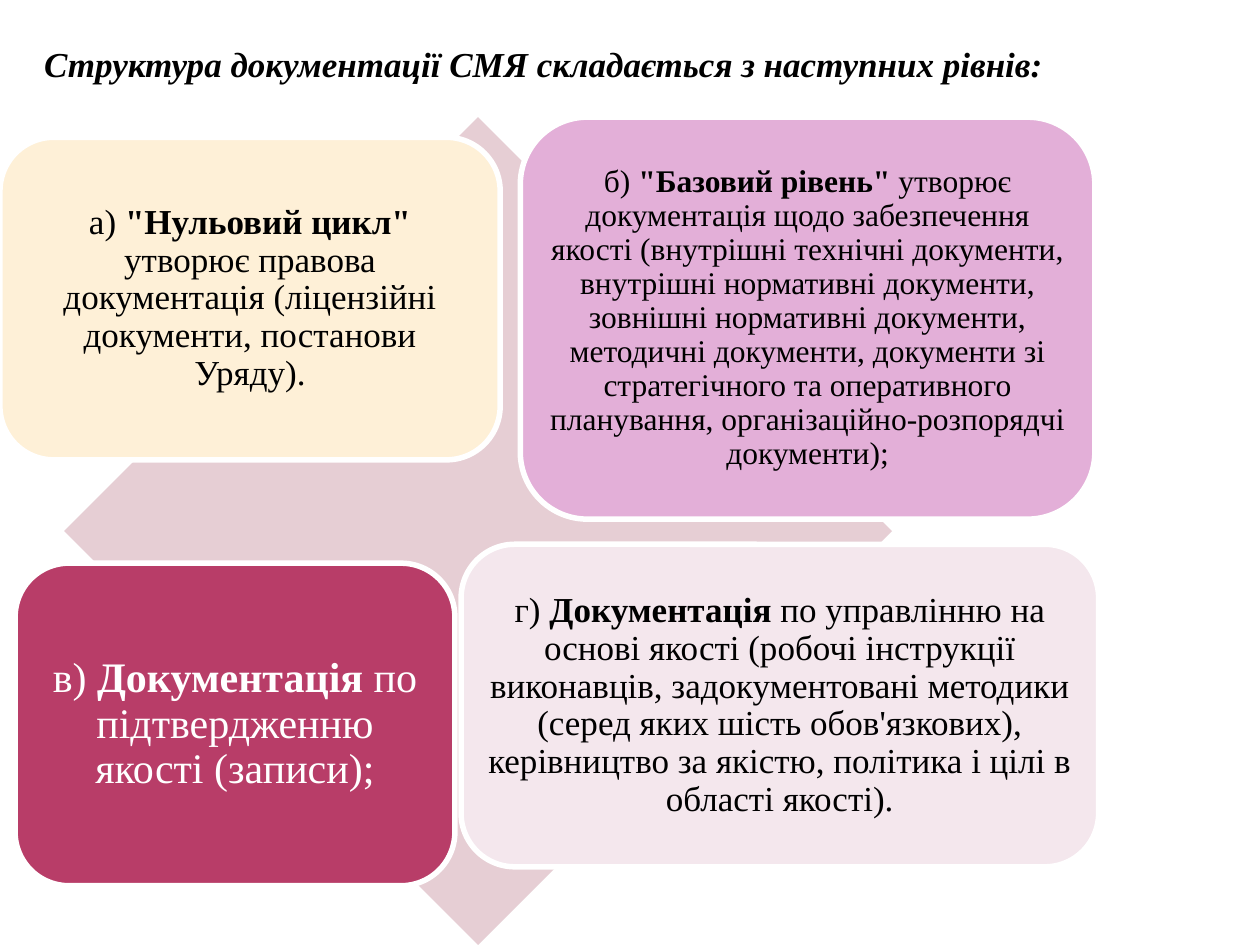
import pptx
import pptx.util
import pptx.dml.color
import pptx.enum.shapes
import pptx.enum.text
from lxml import etree

Inches, Pt = pptx.util.Inches, pptx.util.Pt
RGBColor = pptx.dml.color.RGBColor
SHAPES = pptx.enum.shapes.MSO_SHAPE
ALIGN = pptx.enum.text.PP_ALIGN
ANCHOR = pptx.enum.text.MSO_ANCHOR

FONT = "Times New Roman"
BLACK = RGBColor(0x00, 0x00, 0x00)
WHITE = RGBColor(0xFF, 0xFF, 0xFF)
ROSE = RGBColor(0xE6, 0xCE, 0xD4)
CREAM = RGBColor(0xFE, 0xF0, 0xD7)
ORCHID = RGBColor(0xE3, 0xAF, 0xD8)
CRIMSON = RGBColor(0xB8, 0x3D, 0x68)
BLUSH = RGBColor(0xF4, 0xE7, 0xED)

# Offset and size within the diagram, fill, text colour, text size, inset,
# then the letter, bold term and description of each level
LEVELS = [
    ((0, 0.16, 3.97, 2.56), CREAM, BLACK, 20, 0.08,
     "а) ", "\"Нульовий цикл\" ",
     "утворює правова документація (ліцензійні документи, постанови Уряду)."),
    ((4.13, 0, 4.56, 3.19), ORCHID, BLACK, 18, 0.07,
     "б) ", "\"Базовий рівень\" ",
     "утворює документація щодо забезпечення якості (внутрішні технічні "
     "документи, внутрішні нормативні документи, зовнішні нормативні "
     "документи, методичні документи, документи зі стратегічного та "
     "оперативного планування, організаційно-розпорядчі документи);"),
    ((0.12, 3.54, 3.49, 2.56), CRIMSON, WHITE, 24, 0.1,
     "в) ", "Документація", " по підтвердженню якості (записи);"),
    ((3.66, 3.39, 5.06, 2.56), BLUSH, BLACK, 20, 0.08,
     "г) ", "Документація ",
     "по управлінню на основі якості (робочі інструкції виконавців, "
     "задокументовані методики (серед яких шість обов'язкових), керівництво "
     "за якістю, політика і цілі в області якості)."),
]


def style_font(paragraph, size, color):
    paragraph.font.name = FONT
    paragraph.font.size = Pt(size)
    paragraph.font.color.rgb = color


def add_heading(slide, left, top, width, height):
    heading = slide.placeholders[1]
    heading.left, heading.top = left, top
    heading.width, heading.height = width, height
    frame = heading.text_frame
    frame.auto_size = pptx.enum.text.MSO_AUTO_SIZE.NONE
    frame.vertical_anchor = ANCHOR.TOP
    frame.margin_left = Inches(0.15)
    line = frame.paragraphs[0]
    line.text = "Структура документації СМЯ складається з наступних рівнів:"
    line.space_before = Pt(0)

    # Plain line with no bullet or hanging indent
    properties = line._p.get_or_add_pPr()
    properties.set("marL", "0")
    properties.set("indent", "0")
    etree.SubElement(properties, pptx.oxml.ns.qn("a:buNone"))
    style_font(line, 20, BLACK)
    line.font.bold = line.font.italic = True


def add_level(slide, box, fill, color, size, inset, letter, term, description):
    card = slide.shapes.add_shape(SHAPES.ROUNDED_RECTANGLE, *box)
    card.shadow.inherit = False
    card.fill.solid()
    card.fill.fore_color.rgb = fill
    card.line.color.rgb = WHITE
    card.line.width = Pt(3.15)

    frame = card.text_frame
    frame.word_wrap = True
    frame.vertical_anchor = ANCHOR.MIDDLE
    frame.margin_left = frame.margin_right = Inches(inset)
    frame.margin_top = frame.margin_bottom = Inches(inset)
    paragraph = frame.paragraphs[0]
    paragraph.alignment = ALIGN.CENTER
    paragraph.line_spacing = 0.9
    style_font(paragraph, size, color)
    for text in (letter, term, description):
        run = paragraph.add_run()
        run.text = text
        run.font.bold = text == term


def add_diagram(slide, left, top, diamond_size):
    # Diamond behind the cards
    diamond = slide.shapes.add_shape(
        SHAPES.DIAMOND, left + Inches(0.51), top, diamond_size, diamond_size)
    diamond.shadow.inherit = False
    diamond.fill.solid()
    diamond.fill.fore_color.rgb = ROSE
    diamond.line.fill.background()

    # One card for each documentation level
    for (dx, dy, width, height), *content in LEVELS:
        box = (left + Inches(dx), top + Inches(dy), Inches(width), Inches(height))
        add_level(slide, box, *content)


def main():
    presentation = pptx.Presentation()
    presentation.slide_width = Inches(10)
    presentation.slide_height = Inches(7.5)
    slide = presentation.slides.add_slide(presentation.slide_layouts[1])
    empty_title = slide.shapes.title.element
    empty_title.getparent().remove(empty_title)

    add_heading(slide, Inches(0.2), Inches(0.29), Inches(8.66), Inches(6.78))
    add_diagram(slide, Inches(0), Inches(0.93), Inches(6.57))
    presentation.save("out.pptx")


if __name__ == "__main__":
    main()
